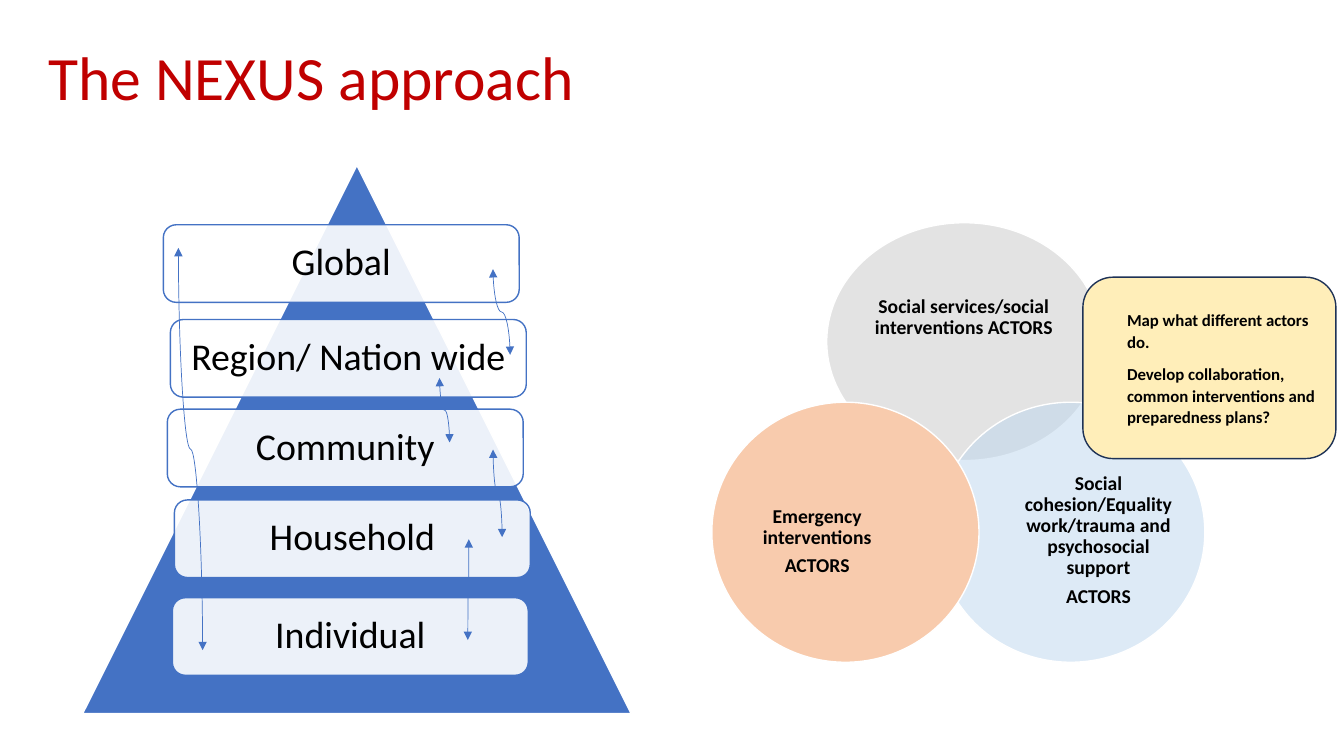
from lxml.etree import SubElement
from pptx import Presentation
from pptx.dml.color import RGBColor
from pptx.enum.shapes import MSO_CONNECTOR, MSO_SHAPE
from pptx.enum.text import MSO_ANCHOR, PP_ALIGN
from pptx.oxml.ns import qn
from pptx.util import Inches, Pt

BLUE, WHITE, BLACK, RED = "4472C4", "FFFFFF", "000000", "C00000"

LEVELS = [
    ("Global", 1.62, 2.23),
    ("Region/ Nation wide", 1.69, 3.17),
    ("Community", 1.66, 4.06),
    ("Household", 1.73, 4.96),
    ("Individual", 1.71, 5.93),
]
# Circle place, fill, opacity, then label place and paragraphs
ACTORS = [
    ((8.2, 2.21, 2.73, 2.36), "C9C9C9", 50, (8.56, 2.62, 2, 1.06),
     ["Social services/social interventions ACTORS"]),
    ((9.29, 3.99, 2.66, 2.58), "BDD7EE", 50, (10.1, 4.65, 1.59, 1.42),
     ["Social cohesion/Equality work/trauma and psychosocial support", "ACTORS"]),
    ((7.06, 3.99, 2.65, 2.58), "F8CBAD", 100, (7.31, 4.66, 1.59, 1.42),
     ["Emergency interventions", "ACTORS"]),
]
LINKS = [
    ((1.77, 2.46), (2.01, 6.45)),
    ((4.89, 2.67), (5.06, 3.52)),
    ((4.65, 5.35), (4.64, 6.35)),
    ((4.89, 4.46), (4.98, 5.33)),
    ((4.36, 3.75), (4.46, 4.39)),
]


def color(code):
    return RGBColor.from_string(code)


def assign(target, values):
    for name, value in values.items():
        setattr(target, name, value)


class SlideBuilder:
    font = "Calibri"

    def __init__(self, page):
        self.page = page

    def shape(self, kind, place, fill, line, opacity=100):
        shape = self.page.shapes.add_shape(kind, *map(Inches, place))
        shape.shadow.inherit = False
        shape.fill.solid()
        shape.fill.fore_color.rgb = color(fill)
        if opacity < 100:
            tint = shape._element.spPr.find(qn("a:solidFill"))[0]
            SubElement(tint, qn("a:alpha"), val=str(opacity * 1000))
        shape.line.color.rgb = color(line)
        shape.line.width = Pt(1)
        return shape

    def set_text(self, box, texts, size, ink=BLACK, bold=False, align=PP_ALIGN.CENTER,
                 anchor=MSO_ANCHOR.MIDDLE, spacing=0.9, after=0, margins=(0, 0, 0, 0)):
        frame = box.text_frame
        assign(frame, {"word_wrap": True, "vertical_anchor": anchor})
        sides = ("margin_left", "margin_top", "margin_right", "margin_bottom")
        assign(frame, dict(zip(sides, map(Inches, margins))))
        for index, text in enumerate(texts):
            para = frame.add_paragraph() if index else frame.paragraphs[0]
            assign(para, {"alignment": align, "line_spacing": spacing,
                          "space_after": Pt(after)})
            span = para.add_run()
            span.text = text
            assign(span.font, {"name": self.font, "size": Pt(size), "bold": bold})
            span.font.color.rgb = color(ink)

    def label(self, place, texts, size, **style):
        box = self.page.shapes.add_textbox(*map(Inches, place))
        self.set_text(box, texts, size, **style)

    def link(self, start, end):
        """Draw a double-headed S-curve that leaves and arrives vertically."""
        (x1, y1), (x2, y2) = start, end
        rightward = x2 > x1
        middle_x, middle_y = (x1 + x2) / 2, (y1 + y2) / 2
        reach, rise = (y2 - y1) / 2, abs(x2 - x1) / 2
        if rightward:
            reach = -reach
        curve = self.page.shapes.add_connector(
            MSO_CONNECTOR.CURVE,
            Inches(middle_x - reach), Inches(middle_y - rise),
            Inches(middle_x + reach), Inches(middle_y + rise))
        properties = curve._element.spPr
        turn = 270 if rightward else 90
        properties.find(qn("a:xfrm")).set("rot", str(turn * 60000))
        curve.line.color.rgb = color(BLUE)
        curve.line.width = Pt(0.5)
        outline = properties.find(qn("a:ln"))
        for tip in ("a:headEnd", "a:tailEnd"):
            SubElement(outline, qn(tip), type="triangle")
        SubElement(properties, qn("a:effectLst"))


def main():
    deck = Presentation()
    assign(deck, {"slide_width": Inches(13.33), "slide_height": Inches(7.5)})
    builder = SlideBuilder(deck.slides.add_slide(deck.slide_layouts[6]))

    builder.shape(MSO_SHAPE.ISOSCELES_TRIANGLE, (0.82, 1.64, 5.44, 5.44), BLUE, WHITE)
    for name, left, top in LEVELS:
        bar = builder.shape(MSO_SHAPE.ROUNDED_RECTANGLE, (left, top, 3.53, 0.77),
                            WHITE, BLUE, opacity=90)
        builder.set_text(bar, [name], 27, after=9.45, margins=(0.11,) * 4)

    builder.label((0.38, 0.42, 5.96, 1.45), ["The NEXUS approach"], 44, ink=RED,
                  align=PP_ALIGN.LEFT, anchor=MSO_ANCHOR.TOP,
                  margins=(0.1, 0.05, 0.1, 0.05))

    for circle, fill, opacity, label, texts in ACTORS:
        builder.shape(MSO_SHAPE.OVAL, circle, fill, WHITE, opacity)
        builder.label(label, texts, 14, bold=True, after=4.9)

    callout = builder.shape(MSO_SHAPE.ROUNDED_RECTANGLE, (10.74, 2.75, 2.51, 1.8),
                            "FFEEB9", "1E3256")
    builder.set_text(callout, [
        "Map what different actors do.",
        "Develop collaboration, common interventions and preparedness plans?",
    ], 12, bold=True, align=PP_ALIGN.LEFT, spacing=1.07, after=8,
        margins=(0.35, 0.05, 0.1, 0.05))

    for start, end in LINKS:
        builder.link(start, end)

    deck.save("out.pptx")


if __name__ == "__main__":
    main()
